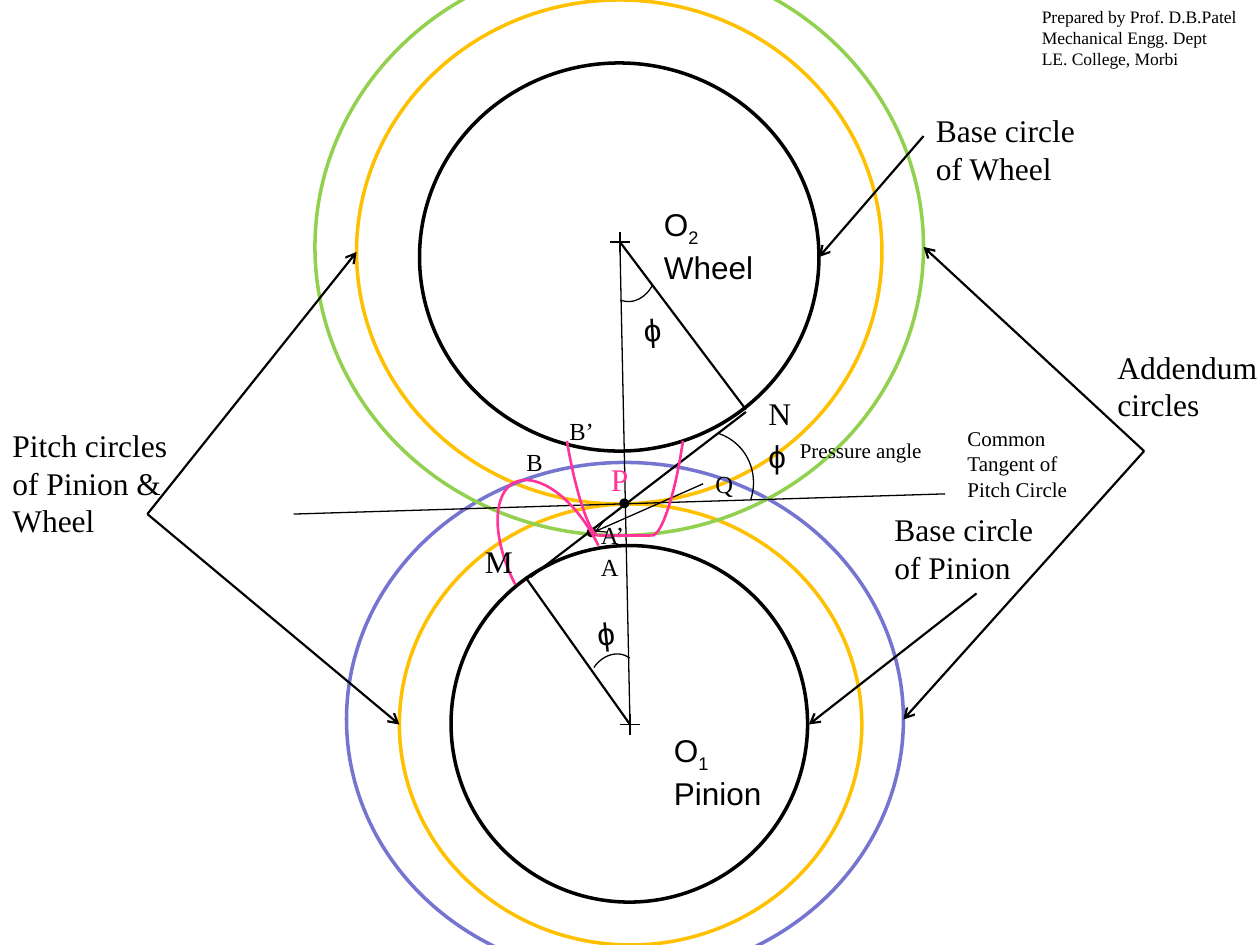
from dataclasses import dataclass
from typing import Optional

from lxml.etree import SubElement
from pptx import Presentation
from pptx.dml.color import RGBColor
from pptx.enum.shapes import MSO_CONNECTOR as CONN, MSO_SHAPE as SHAPE
from pptx.oxml.ns import qn
from pptx.util import Cm, Pt

BLACK = RGBColor(0x00, 0x00, 0x00)
AMBER = RGBColor(0xFF, 0xC0, 0x00)
GREEN = RGBColor(0x92, 0xD0, 0x50)
VIOLET = RGBColor(0x75, 0x75, 0xD1)
PINK = RGBColor(0xFF, 0x33, 0x99)
SERIF, SANS = "Times New Roman", "Arial"
Point = tuple[float, float]


@dataclass
class Circle:
    x: float
    y: float
    w: float
    h: float
    color: RGBColor = BLACK
    solid: bool = False


@dataclass
class Line:
    start: Point
    end: Point
    width: float = 1.25
    arrow: bool = False
    color: RGBColor = BLACK


@dataclass
class Arc:
    x: float
    y: float
    w: float
    h: float
    rotation: float
    end: float = 2.614
    start: float = 164.199


@dataclass
class Label:
    text: str  # newline = new paragraph, text between bars = subscript
    x: float
    y: float
    w: float
    h: float
    size: float = 18
    font: str = SERIF
    color: RGBColor = BLACK
    rotation: float = 0


def inch(value: float) -> Cm:
    return Cm(value * 2.54)


def style(sp, color: RGBColor, width: float, fill: Optional[RGBColor] = None) -> None:
    sp.shadow.inherit = False
    sp.line.color.rgb = color
    sp.line.width = Pt(width)
    if fill is None:
        sp.fill.background()
    else:
        sp.fill.solid()
        sp.fill.fore_color.rgb = fill


def draw_circle(s, c: Circle) -> None:
    sp = s.shapes.add_shape(SHAPE.OVAL, *map(inch, (c.x, c.y, c.w, c.h)))
    style(sp, c.color, 2, c.color if c.solid else None)


def draw_line(s, ln: Line) -> None:
    cn = s.shapes.add_connector(CONN.STRAIGHT, *map(inch, ln.start + ln.end))
    cn.line.color.rgb = ln.color
    cn.line.width = Pt(ln.width)
    if ln.arrow:
        SubElement(cn.line._get_or_add_ln(), qn("a:tailEnd"), type="arrow")
    SubElement(cn._element.spPr, qn("a:effectLst"))


def draw_arc(s, a: Arc) -> None:
    sp = s.shapes.add_shape(SHAPE.ARC, *map(inch, (a.x, a.y, a.w, a.h)))
    sp.adjustments[0], sp.adjustments[1] = a.start, a.end
    sp.rotation = a.rotation
    style(sp, BLACK, 0.75)


def draw_curve(s, controls: tuple[Point, ...], steps: int = 24) -> None:
    """Draw a cubic Bezier curve as a fine open polyline."""
    points = []
    for i in range(steps + 1):
        t = i / steps
        weights = ((1 - t) ** 3, 3 * t * (1 - t) ** 2, 3 * t * t * (1 - t), t ** 3)
        points.append(tuple(inch(sum(w * c[axis] for w, c in zip(weights, controls)))
                            for axis in (0, 1)))
    builder = s.shapes.build_freeform(*points[0])
    builder.add_line_segments(points[1:], close=False)
    style(builder.convert_to_shape(), PINK, 1.5)


def draw_label(s, lb: Label) -> None:
    box = s.shapes.add_textbox(*map(inch, (lb.x, lb.y, lb.w, lb.h)))
    box.rotation = lb.rotation
    tf = box.text_frame
    tf.word_wrap = True
    tf.text = lb.text.replace("|", "")
    for p, text in zip(tf.paragraphs, lb.text.split("\n")):
        parts = text.split("|")
        p.runs[0].text = parts[0]
        for part in parts[1:]:
            p.add_run().text = part
        for i, r in enumerate(p.runs):
            r.font.size, r.font.name = Pt(lb.size), lb.font
            r.font.color.rgb = lb.color
            if i % 2:
                r._r.get_or_add_rPr().set("baseline", "-25000")


# Gear centres and shared points
O1, O2 = (5, 5.75), (4.92, 1.92)
PITCH_HUB, ADDENDUM_HUB = (1.17, 4.08), (9.08, 3.58)

CIRCLES = [
    Circle(2.83, 0, 4.17, 4, AMBER),
    Circle(3.17, 4, 3.67, 3.5, AMBER),
    Circle(3.33, 0.5, 3.17, 3.08),
    Circle(3.58, 4.33, 2.83, 2.83),
    Circle(2.75, 3.67, 4.42, 4.08, VIOLET),
    Circle(2.5, -0.33, 4.83, 4.58, GREEN),
    Circle(4.93, 3.97, 0.05, 0.05, solid=True),
    Circle(4.67, 4.2, 0.05, 0.05, solid=True),
]

LINES = [
    # Callout arrows
    Line((7.75, 4.71), (6.42, 5.75), arrow=True),
    Line((7.33, 1.08), (6.5, 2.04), arrow=True),
    Line(PITCH_HUB, (2.83, 2), arrow=True),
    Line(PITCH_HUB, (3.17, 5.75), arrow=True),
    Line(ADDENDUM_HUB, (7.33, 1.96), arrow=True),
    Line(ADDENDUM_HUB, (7.17, 5.71), arrow=True),
    # Line of action, radii, line of centres, tangents
    Line((5.92, 3.27), (4.21, 4.58)),
    Line(O1, (4.17, 4.58)),
    Line(O2, (5.92, 3.25)),
    Line(O2, O1, 0.75),
    Line((2.33, 4.08), (7.5, 3.92), 0.75),
    Line((5.58, 3.84), (4.72, 4.22), 0.75, arrow=True),
    # Tooth tip
    Line((4.75, 4.25), (5.17, 4.25), color=PINK),
]
# Four short ticks make the cross at each centre
LINES += [Line((x, y), (x + dx, y + dy), 1) for x, y in (O1, O2)
          for dx, dy in ((-0.08, 0), (0.08, 0), (0, -0.08), (0, 0.08))]

TOOTH_CURVES = [
    ((4.75, 4.33), (4.57, 3.96), (4.27, 3.74), (4.08, 3.83)),
    ((4.5, 3.5), (4.57, 3.93), (4.69, 4.26), (4.75, 4.25)),
    ((4.09, 4.64), (3.91, 4.29), (3.9, 3.93), (4.08, 3.83)),
    ((5.42, 3.5), (5.36, 3.92), (5.25, 4.26), (5.17, 4.25)),
]

ARCS = [
    Arc(5.17, 3.42, 0.81, 0.83, 14.1),
    Arc(4.64, 5.22, 0.45, 0.37, 301.7),
    Arc(4.79, 1.99, 0.45, 0.37, 114.4, end=215.728),
]

LABELS = [
    Label("Base circle of Pinion", 7, 4, 1.5, 0.71),
    Label("Base circle of Wheel", 7.33, 0.83, 1.5, 0.71),
    Label("Pitch circles of Pinion & Wheel", 0, 3.33, 1.5, 1.01),
    Label("Addendum circles", 8.77, 2.71, 1.5, 0.71),
    Label("O|2\nWheel", 5.17, 1.58, 0.92, 0.71, font=SANS),
    Label("O|1 |Pinion", 5.25, 5.75, 0.92, 0.71, font=SANS),
    Label("P", 4.75, 3.6, 0.33, 0.4, color=PINK),
    Label("N", 6, 3.08, 0.33, 0.4),
    Label("M", 3.75, 4.25, 0.33, 0.4),
    Label("ϕ", 6, 3.42, 0.5, 0.4, font=SANS),
    Label("ϕ", 4.64, 4.83, 0.26, 0.4, font=SANS, rotation=354),
    Label("ϕ", 5.01, 2.42, 0.26, 0.4, font=SANS, rotation=356.5),
    Label("Common Tangent of Pitch Circle", 7.58, 3.33, 1, 0.71, 12),
    Label("Pressure angle", 6.25, 3.42, 1.33, 0.3, 12),
    Label("Prepared by Prof. D.B.Patel\nMechanical Engg. Dept\nLE. College, Morbi",
          8.17, 0, 1.83, 0.61, 10),
]
LABELS += [Label(text, x, y, 0.42, 0.34, 14) for text, x, y in (
    ("A", 4.67, 4.33), ("B", 4.08, 3.5), ("A’", 4.67, 4.08),
    ("B’", 4.42, 3.25), ("Q", 5.58, 3.67))]


def main() -> None:
    prs = Presentation()
    prs.slide_width, prs.slide_height = Cm(25.4), Cm(19.05)
    s = prs.slides.add_slide(prs.slide_layouts[6])
    for items, draw in ((CIRCLES, draw_circle), (LINES, draw_line), (ARCS, draw_arc),
                        (TOOTH_CURVES, draw_curve), (LABELS, draw_label)):
        for item in items:
            draw(s, item)
    prs.save("out.pptx")


if __name__ == "__main__":
    main()
